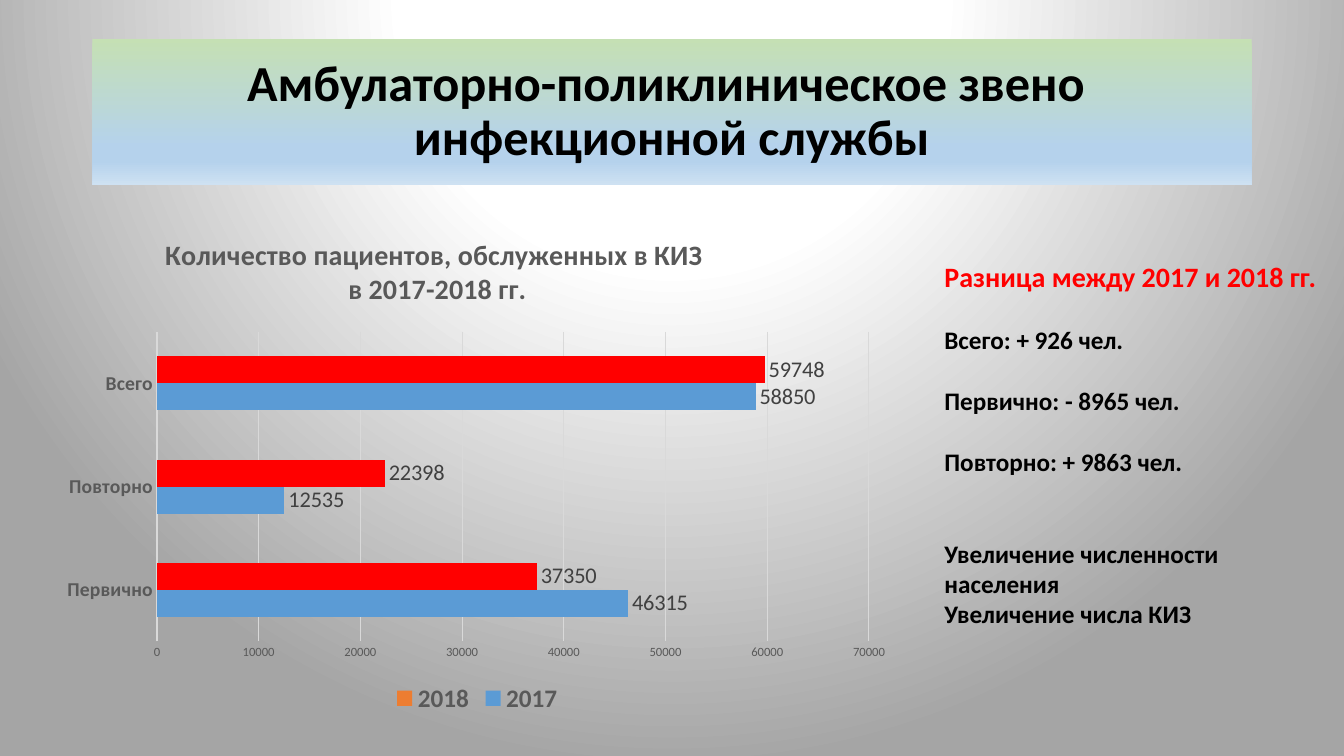
from lxml import etree
from pptx import Presentation
from pptx.chart.data import CategoryChartData
from pptx.dml.color import RGBColor
from pptx.enum.chart import XL_CHART_TYPE as ChartType, XL_LABEL_POSITION as LabelPosition
from pptx.enum.chart import XL_LEGEND_POSITION as LegendPosition, XL_TICK_MARK as TickMark
from pptx.enum.text import MSO_ANCHOR, PP_ALIGN
from pptx.oxml import parse_xml
from pptx.oxml.ns import nsdecls, qn
from pptx.util import Pt

FONT = "Calibri"
BLACK = RGBColor(0x00, 0x00, 0x00)
RED = RGBColor(0xFF, 0x00, 0x00)
BLUE = RGBColor(0x5B, 0x9B, 0xD5)
ORANGE = RGBColor(0xED, 0x7D, 0x31)
GREY = RGBColor(0x59, 0x59, 0x59)
DARK_GREY = RGBColor(0x40, 0x40, 0x40)
PALE_GREY = RGBColor(0xD9, 0xD9, 0xD9)

TITLE = "Амбулаторно-поликлиническое звено \vинфекционной службы"
CHART_TITLE = "Количество пациентов, обслуженных в КИЗ \nв 2017-2018 гг."
CATEGORIES = ["Первично", "Повторно", "Всего"]
# name, values, series colour, bar colour
SERIES = [
    ("2017", [46315, 12535, 58850], BLUE, None),
    ("2018", [37350, 22398, 59748], ORANGE, RED),
]
LINE = 22
# text, size, colour, space before
NOTES = [
    ("Разница между 2017 и 2018 гг.", 20, RED, 0),
    ("Всего: + 926 чел.", 18, BLACK, LINE),
    ("Первично: - 8965 чел.", 18, BLACK, LINE),
    ("Повторно: + 9863 чел.", 18, BLACK, LINE),
    ("Увеличение численности населения", 18, BLACK, 2 * LINE),
    ("Увеличение числа КИЗ", 18, BLACK, 0),
]
PAGE_STOPS = [(0, "FFFFFF"), (35, "FFFFFF"), (100, "A5A5A5")]
TITLE_STOPS = [(0, "C5E0B4"), (74, "B5D2EC"), (83, "B5D2EC"), (100, "CEE1F2")]
CIRCLE = '<a:path path="circle"><a:fillToRect l="50000" t="-80000" r="50000" b="180000"/></a:path>'
DOWNWARD = '<a:lin ang="5400000" scaled="0"/>'


def style(font, size, color, bold=False):
    font.name, font.size, font.bold = FONT, Pt(size), bold
    font.color.rgb = color


def set_gradient(fill, parent, stops, direction):
    """Fill with colour stops given in percent; parent holds the fill element."""
    fill.gradient()
    old = parent.find(".//" + qn("a:gradFill"))
    marks = "".join(
        f'<a:gs pos="{pos * 1000}"><a:srgbClr val="{color}"/></a:gs>' for pos, color in stops)
    old.getparent().replace(old, parse_xml(
        f'<a:gradFill {nsdecls("a")} rotWithShape="1"><a:gsLst>{marks}</a:gsLst>{direction}</a:gradFill>'))


def set_layout(element, index, **values):
    """Place a chart part by fractions of the chart's size."""
    for old in element.findall(qn("c:layout")):
        element.remove(old)
    layout = etree.Element(qn("c:layout"))
    manual = etree.SubElement(layout, qn("c:manualLayout"))
    for name, value in values.items():
        etree.SubElement(manual, qn("c:" + name)).set("val", str(value))
    element.insert(index, layout)


def add_title(page):
    title = page.shapes.title
    title.left, title.top, title.width, title.height = Pt(66), Pt(28), Pt(828), Pt(104.4)
    set_gradient(title.fill, title.element.spPr, TITLE_STOPS, DOWNWARD)
    frame = title.text_frame
    frame.text, frame.vertical_anchor = TITLE, MSO_ANCHOR.MIDDLE
    para = frame.paragraphs[0]
    para.alignment, para.line_spacing = PP_ALIGN.CENTER, 0.9
    style(para.font, 36, BLACK, True)


def add_notes(page):
    box = page.shapes.add_textbox(Pt(667.5), Pt(182), Pt(282), Pt(293))
    frame = box.text_frame
    frame.word_wrap = True
    for number, (text, size, color, gap) in enumerate(NOTES):
        para = frame.add_paragraph() if number else frame.paragraphs[0]
        para.text, para.space_before = text, Pt(gap)
        style(para.font, size, color, True)


def add_patients_chart(page):
    data = CategoryChartData(number_format="0")
    data.categories = CATEGORIES
    for name, values, _, _ in SERIES:
        data.add_series(name, values)
    chart = page.shapes.add_chart(
        ChartType.BAR_CLUSTERED, Pt(36.7), Pt(162.7), Pt(608.4), Pt(350.6), data).chart
    style(chart.font, 10, BLACK)

    chart.has_title = True
    heading = chart.chart_title
    heading.text_frame.text = CHART_TITLE
    for para in heading.text_frame.paragraphs:
        style(para.font, 20, GREY, True)
    heading.include_in_layout = False
    title_element = chart.element.find(".//" + qn("c:title"))
    set_layout(title_element, 1, xMode="edge", yMode="edge", x=0.13, y=0.01)
    plot_element = chart.element.find(".//" + qn("c:plotArea"))
    set_layout(plot_element, 0, layoutTarget="inner", xMode="edge", yMode="edge",
               x=0.124, y=0.212, w=0.836, h=0.631)

    chart.has_legend = True
    chart.legend.position = LegendPosition.BOTTOM
    chart.legend.include_in_layout = False
    style(chart.legend.font, 18, GREY, True)

    categories, values = chart.category_axis, chart.value_axis
    for axis in (categories, values):
        axis.major_tick_mark = axis.minor_tick_mark = TickMark.NONE
    style(categories.tick_labels.font, 14, GREY, True)
    style(values.tick_labels.font, 9, GREY)
    values.minimum_scale, values.maximum_scale, values.major_unit = 0, 70000, 10000
    values.format.line.fill.background()
    for line in (categories.format.line, values.major_gridlines.format.line):
        line.color.rgb, line.width = PALE_GREY, Pt(0.75)

    plot = chart.plots[0]
    plot.gap_width, plot.vary_by_categories = 182, False
    for series, (_, points, color, bar_color) in zip(plot.series, SERIES):
        series.format.fill.solid()
        series.format.fill.fore_color.rgb = color
        if bar_color is not None:
            for index in range(len(points)):
                fill = series.points[index].format.fill
                fill.solid()
                fill.fore_color.rgb = bar_color
        labels = series.data_labels
        labels.show_value, labels.position = True, LabelPosition.OUTSIDE_END
        labels.number_format, labels.number_format_is_linked = "0", False
        style(labels.font, 16, DARK_GREY)


def main():
    deck = Presentation()
    deck.slide_width, deck.slide_height = Pt(960), Pt(540)
    page = deck.slides.add_slide(deck.slide_layouts[5])
    set_gradient(page.background.fill, page.element, PAGE_STOPS, CIRCLE)
    add_title(page)
    add_patients_chart(page)
    add_notes(page)
    deck.save("out.pptx")


if __name__ == "__main__":
    main()
